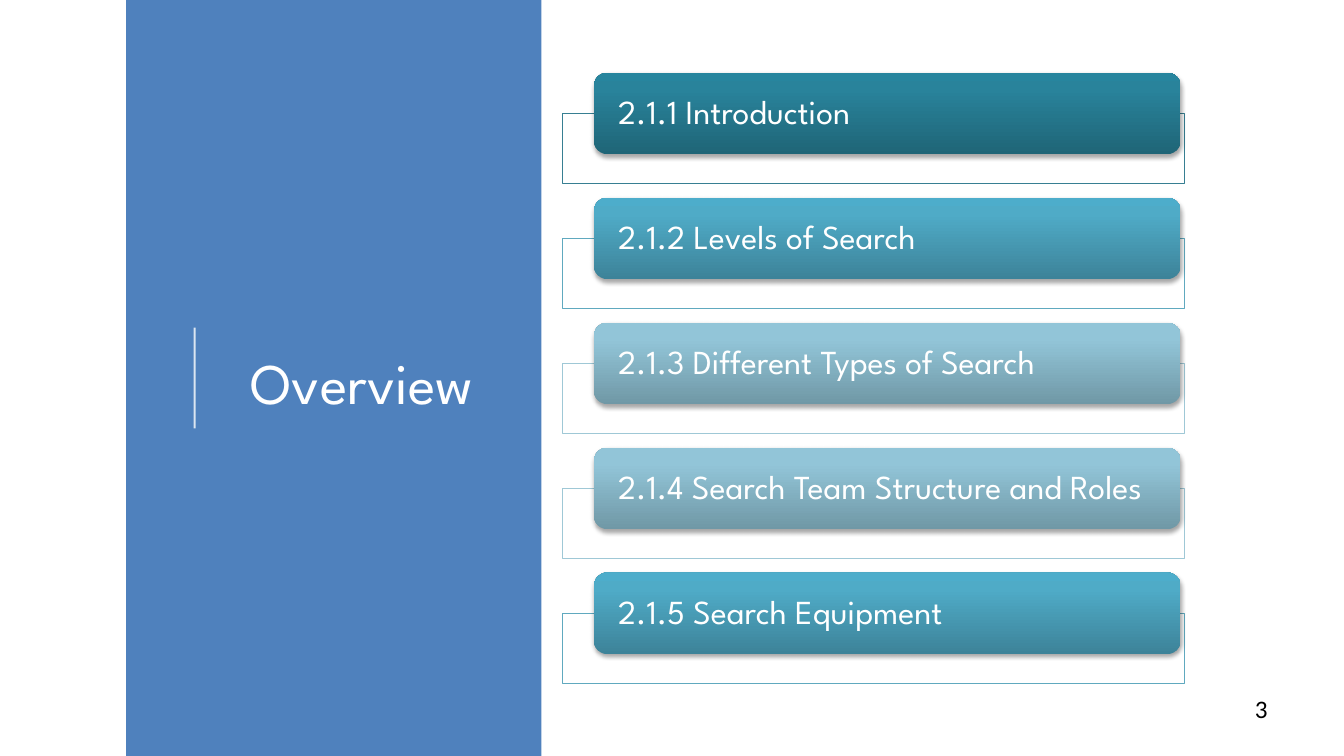
"""Build the Overview slide with five search topics."""
from lxml import etree
from pptx import Presentation
from pptx.dml.color import RGBColor
from pptx.enum.shapes import MSO_CONNECTOR, MSO_SHAPE
from pptx.enum.text import MSO_ANCHOR, PP_ALIGN
from pptx.oxml.ns import qn
from pptx.util import Inches, Pt

RECTANGLE, ROUNDED = MSO_SHAPE.RECTANGLE, MSO_SHAPE.ROUNDED_RECTANGLE
STRAIGHT = MSO_CONNECTOR.STRAIGHT
MIDDLE = MSO_ANCHOR.MIDDLE
LEFT, CENTER, RIGHT = PP_ALIGN.LEFT, PP_ALIGN.CENTER, PP_ALIGN.RIGHT

COLORS = {"panel": "4F81BD", "white": "FFFFFF", "black": "000000"}
TONES = {
    "dark": {"outline": "377F92", "stops": ["1F6577", "29839B", "27859E"]},
    "medium": {"outline": "60A9BF", "stops": ["3D8399", "4FABC7", "4DADCB"]},
    "light": {"outline": "9FC8D6", "stops": ["7098A6", "92C5D8", "91C7DA"]},
}
STOP_POSITIONS = [0, 80, 100]
TOPICS = [
    ("2.1.1 Introduction", "dark"),
    ("2.1.2 Levels of Search", "medium"),
    ("2.1.3 Different Types of Search", "light"),
    ("2.1.4 Search Team Structure and Roles", "light"),
    ("2.1.5 Search Equipment", "medium"),
]
TOP, PITCH = 0.72, 1.24


def add_element(parent, tag, **attributes):
    """Append a drawing element with the given attributes."""
    element = etree.SubElement(parent, qn(tag))
    for name, value in attributes.items():
        element.set(name, str(value))
    return element


def style_text(paragraph, text, font, size, color, align):
    """Fill a paragraph and set its font and alignment."""
    paragraph.text = text
    paragraph.alignment = align
    paragraph.font.name = font
    paragraph.font.size = Pt(size)
    paragraph.font.color.rgb = RGBColor.from_string(COLORS[color])


prs = Presentation()
prs.slide_width, prs.slide_height = Inches(13.33), Inches(7.5)
slide = prs.slides.add_slide(prs.slide_layouts[5])
shapes = slide.shapes

panel = shapes.add_shape(RECTANGLE, Inches(1.25), 0, Inches(4.12), Inches(7.5))
panel.shadow.inherit = False
panel.fill.solid()
panel.fill.fore_color.rgb = RGBColor.from_string(COLORS["panel"])
panel.line.fill.background()

accent = shapes.add_connector(STRAIGHT, Inches(1.93), Inches(4.25), Inches(1.93), Inches(3.25))
accent.line.width = Pt(1.5)
accent.line.color.rgb = RGBColor.from_string(COLORS["white"])
accent_properties = accent._element.spPr
add_element(accent_properties.find(".//" + qn("a:srgbClr")), "a:alpha", val=80000)
add_element(accent_properties, "a:effectLst")

title = shapes.title
shapes._spTree.append(title._element)
title.left, title.top = Inches(2.09), Inches(0.78)
title.width, title.height = Inches(3), Inches(6.02)
title.text_frame.vertical_anchor = MIDDLE
style_text(title.text_frame.paragraphs[0], "Overview", "League Spartan", 41, "white", CENTER)

for row, (topic, tone) in enumerate(TOPICS):
    top = TOP + row * PITCH

    frame = shapes.add_shape(RECTANGLE, Inches(5.58), Inches(top + 0.41), Inches(6.17), Inches(0.69))
    frame.shadow.inherit = False
    frame.fill.solid()
    frame.fill.fore_color.rgb = RGBColor.from_string(COLORS["white"])
    frame.line.color.rgb = RGBColor.from_string(TONES[tone]["outline"])
    frame.line.width = Pt(0.75)

    bar = shapes.add_shape(ROUNDED, Inches(5.89), Inches(top), Inches(5.82), Inches(0.81))
    bar.line.fill.background()
    bar.fill.gradient()
    bar.fill.gradient_angle = 90
    bar_properties = bar._element.spPr
    stop_list = bar_properties.find(".//" + qn("a:gsLst"))
    for default_stop in list(stop_list):
        stop_list.remove(default_stop)
    for position, color in zip(STOP_POSITIONS, TONES[tone]["stops"]):
        stop = add_element(stop_list, "a:gs", pos=position * 1000)
        add_element(stop, "a:srgbClr", val=color)

    bar.shadow.inherit = False
    shadow = add_element(bar_properties.find(qn("a:effectLst")), "a:outerShdw",
                         blurRad=Pt(3.1), dist=Pt(1.8), dir=5400000, rotWithShape=0)
    shadow_color = add_element(shadow, "a:srgbClr", val=COLORS["black"])
    add_element(shadow_color, "a:alpha", val=35000)

    label = bar.text_frame
    label.word_wrap = True
    label.vertical_anchor = MIDDLE
    label.margin_left = label.margin_right = Inches(0.2)
    label.margin_top = label.margin_bottom = 0
    style_text(label.paragraphs[0], topic, "League Spartan", 24, "white", LEFT)
    label.paragraphs[0].line_spacing = 0.9

page_number = shapes.add_textbox(Inches(9.56), Inches(6.83), Inches(3.11), Inches(0.4)).text_frame
page_number.word_wrap = True
style_text(page_number.paragraphs[0], "3", "Calibri", 18, "black", RIGHT)

prs.save("out.pptx")
